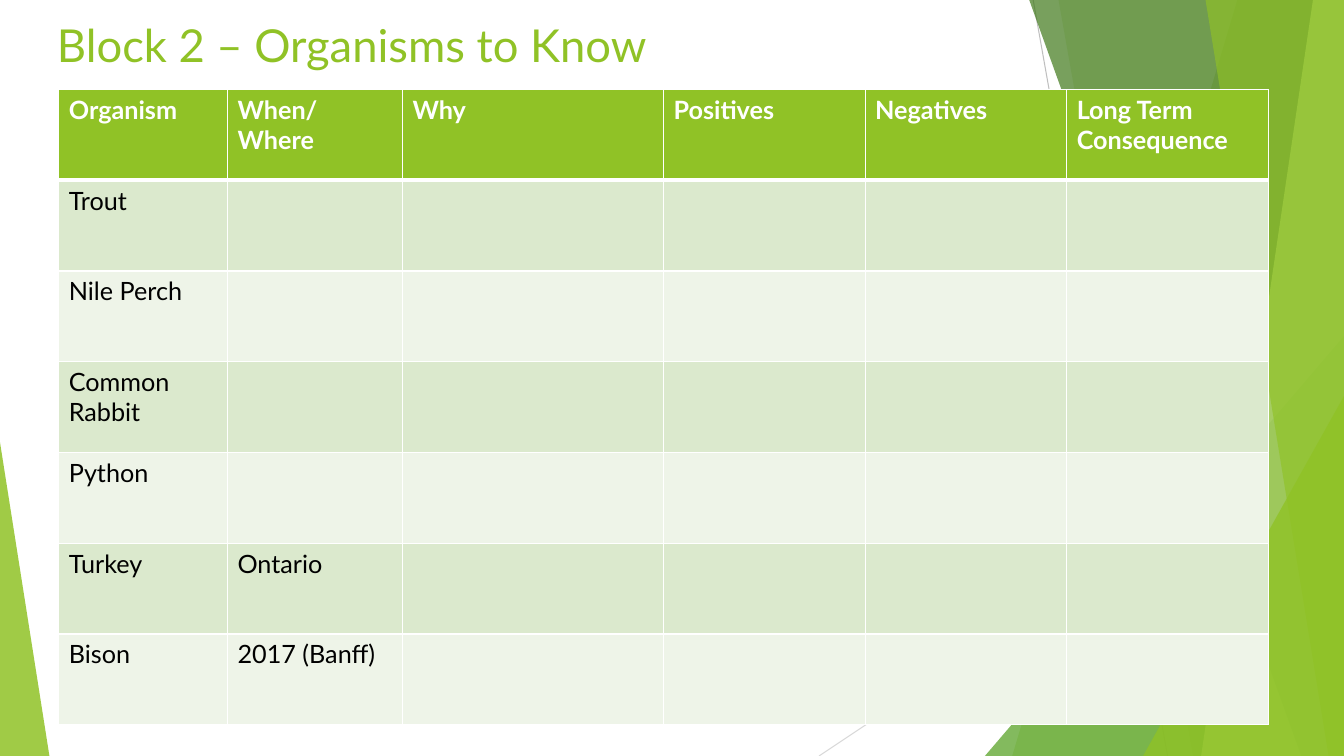
from lxml import etree
from pptx import Presentation
from pptx.dml.color import RGBColor
from pptx.enum.shapes import MSO_CONNECTOR as CONN, MSO_SHAPE as SHAPE
from pptx.enum.text import MSO_ANCHOR as ANCHOR, MSO_AUTO_SIZE as AUTOSIZE, PP_ALIGN as ALIGN
from pptx.oxml.ns import qn
from pptx.util import Pt

FONT = "Lato"
GREEN, WHITE, BLACK = "90C226", "FFFFFF", "000000"
BANDS = ["DBE9CD", "EEF4E8"]
WIDTH, HEIGHT = 960, 540
COLUMNS = [120.5, 125, 186.5, 144, 144, 144]
ROW_HEIGHT = 64.8
ROWS = [
    ["Organism", "When/Where", "Why", "Positives", "Negatives", "Long Term Consequence"],
    ["Trout"],
    ["Nile Perch"],
    ["Common Rabbit"],
    ["Python"],
    ["Turkey", "Ontario"],
    ["Bison", "2017 (Banff)"],
]


def rgb(color):
    return RGBColor.from_string(color)


def set_font(p, size, color, bold=False):
    p.font.name, p.font.size, p.font.bold = FONT, Pt(size), bold
    p.font.color.rgb = rgb(color)


def paint(sp, color, alpha):
    sp.shadow.inherit = False
    sp.line.fill.background()
    sp.fill.solid()
    sp.fill.fore_color.rgb = rgb(color)
    clr = sp.fill._xPr.find(qn("a:solidFill"))[0]
    etree.SubElement(clr, qn("a:alpha"), val=str(alpha * 1000))


def add_line(s, x1, y1, x2, y2, color):
    line = s.shapes.add_connector(CONN.STRAIGHT, Pt(x1), Pt(y1), Pt(x2), Pt(y2))
    line.line.color.rgb = rgb(color)
    line.line.width = Pt(0.75)
    etree.SubElement(line._element.spPr, qn("a:effectLst"))


def add_band(s, top_left, bottom_left, color, alpha):
    fb = s.shapes.build_freeform(Pt(top_left), Pt(-0.6))
    corners = [(WIDTH, -0.6), (WIDTH, HEIGHT), (bottom_left, HEIGHT)]
    fb.add_line_segments([(Pt(x), Pt(y)) for x, y in corners])
    paint(fb.convert_to_shape(), color, alpha)


def add_triangle(s, left, top, width, apex, color, alpha):
    sp = s.shapes.add_shape(SHAPE.ISOSCELES_TRIANGLE, Pt(left), Pt(top), Pt(width), Pt(HEIGHT - top))
    sp.adjustments[0] = apex
    paint(sp, color, alpha)


def add_facets(s):
    add_line(s, 738, 0, 834, HEIGHT, "BFBFBF")
    add_line(s, WIDTH, 290, 585, HEIGHT, "D9D9D9")
    add_band(s, 884, 723, GREEN, 30)
    add_band(s, 756, 852, GREEN, 20)
    add_triangle(s, 703.5, 240, 256.5, 1, "54A021", 72)
    add_band(s, 735, 929.5, "3F7819", 70)
    add_band(s, 938, 858, "C0E474", 70)
    add_band(s, 861, 949, GREEN, 65)
    add_triangle(s, 816.5, 283, 143.5, 1, GREEN, 80)
    add_triangle(s, 0, 316, 35.3, 0, GREEN, 85)


def set_title(s, text):
    title = s.shapes.title
    s.shapes._spTree.append(title._element)
    title.left, title.top, title.width, title.height = Pt(33.5), Pt(7), Pt(677), Pt(49)
    tf = title.text_frame
    tf.text = text
    tf.word_wrap = True
    tf.auto_size = AUTOSIZE.NONE
    tf.vertical_anchor = ANCHOR.MIDDLE
    p = tf.paragraphs[0]
    p.alignment = ALIGN.LEFT
    set_font(p, 32.4, GREEN)


def set_borders(cell, widths):
    tcPr = cell._tc.get_or_add_tcPr()
    for i, (side, width) in enumerate(widths.items()):
        ln = etree.Element(qn(f"a:{side}"), w=str(Pt(width)))
        fill = etree.SubElement(ln, qn("a:solidFill"))
        etree.SubElement(fill, qn("a:srgbClr"), val=WHITE)
        tcPr.insert(i, ln)


def add_organism_table(s, left, top):
    frame = s.shapes.add_table(len(ROWS), len(COLUMNS), Pt(left), Pt(top),
                               Pt(sum(COLUMNS)), Pt(ROW_HEIGHT * len(ROWS)))
    table = frame.table
    for column, width in zip(table.columns, COLUMNS):
        column.width = Pt(width)
    for r, texts in enumerate(ROWS):
        table.rows[r].height = Pt(ROW_HEIGHT)
        header = r == 0
        for c, cell in enumerate(table.rows[r].cells):
            cell.text = texts[c] if c < len(texts) else ""
            set_font(cell.text_frame.paragraphs[0], 18, WHITE if header else BLACK, header)
            cell.fill.solid()
            cell.fill.fore_color.rgb = rgb(GREEN if header else BANDS[(r - 1) % 2])
            set_borders(cell, {"lnL": 1, "lnR": 1, "lnT": 3 if r == 1 else 1, "lnB": 3 if header else 1})


def main():
    prs = Presentation()
    prs.slide_width, prs.slide_height = Pt(WIDTH), Pt(HEIGHT)
    s = prs.slides.add_slide(prs.slide_layouts[5])
    add_facets(s)
    set_title(s, "Block 2 – Organisms to Know")
    add_organism_table(s, 42, 64)
    prs.save("out.pptx")


if __name__ == "__main__":
    main()
